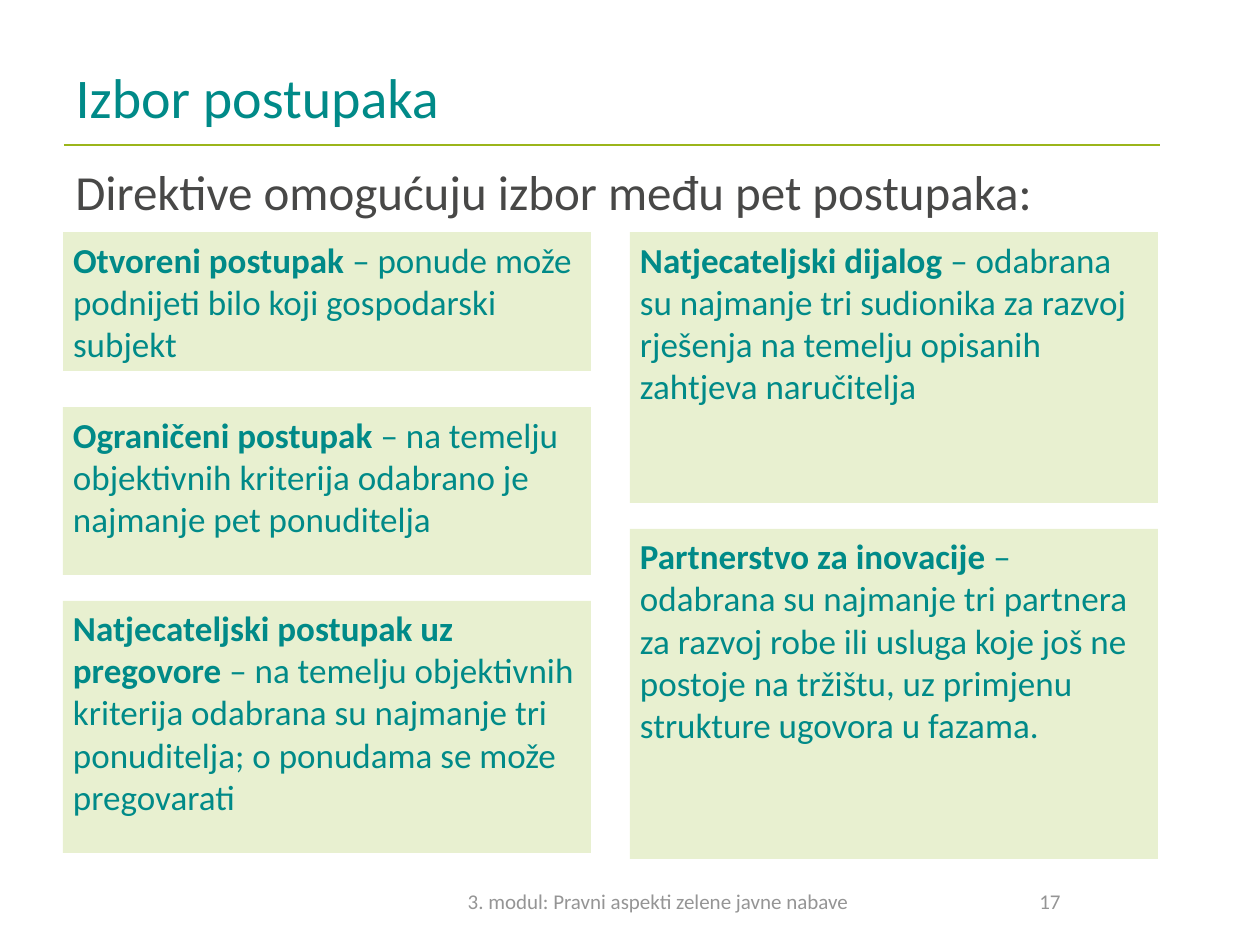
from lxml.etree import SubElement
from pptx import Presentation
from pptx.dml.color import RGBColor
from pptx.enum.shapes import MSO_CONNECTOR, MSO_SHAPE
from pptx.enum.text import MSO_ANCHOR as ANCHOR, MSO_AUTO_SIZE, PP_ALIGN as ALIGN
from pptx.oxml.ns import qn
from pptx.util import Emu, Pt

TEAL = RGBColor(0x00, 0x8A, 0x88)
GREEN = RGBColor(0x9B, 0xB5, 0x1B)
PALE_GREEN = RGBColor(0xE8, 0xF0, 0xD0)
DARK_GRAY = RGBColor(0x48, 0x48, 0x47)
GRAY = RGBColor(0x95, 0x95, 0x95)

FONT = "Calibri"
LEFT, RIGHT = 63, 630
TOP = 232
BOX_WIDTH = 528

# left, top, height, procedure, description
PROCEDURES = [
    (LEFT, TOP, 139, "Otvoreni postupak",
     "ponude može podnijeti bilo koji gospodarski subjekt"),
    (LEFT, 407, 168, "Ograničeni postupak",
     "na temelju objektivnih kriterija odabrano je najmanje pet ponuditelja"),
    (LEFT, 601, 252, "Natjecateljski postupak uz pregovore",
     "na temelju objektivnih kriterija odabrana su najmanje tri ponuditelja; "
     "o ponudama se može pregovarati"),
    (RIGHT, TOP, 271, "Natjecateljski dijalog",
     "odabrana su najmanje tri sudionika za razvoj rješenja na temelju "
     "opisanih zahtjeva naručitelja"),
    (RIGHT, 529, 330, "Partnerstvo za inovacije",
     "odabrana su najmanje tri partnera za razvoj robe ili usluga koje još ne "
     "postoje na tržištu, uz primjenu strukture ugovora u fazama."),
]


def px(n):
    return Emu(round(n * 914400 / 126))


def place(sp, x, y, w, h):
    sp.left, sp.top, sp.width, sp.height = px(x), px(y), px(w), px(h)


def write(sp, *texts, size, color, align=ALIGN.LEFT, anchor=ANCHOR.TOP, bold_first=False):
    """Fill a shape with one paragraph, one run for each text."""
    tf = sp.text_frame
    tf.word_wrap = True
    tf.auto_size = MSO_AUTO_SIZE.NONE
    tf.vertical_anchor = anchor
    p = tf.paragraphs[0]
    p.alignment = align
    p.space_before = Pt(0)
    for i, text in enumerate(texts):
        r = p.add_run()
        r.text = text
        r.font.name, r.font.size = FONT, Pt(size)
        r.font.color.rgb = color
        r.font.bold = bold_first and i == 0


def remove_bullet(p):
    pPr = p._p.get_or_add_pPr()
    pPr.set("marL", "0")
    pPr.set("indent", "0")
    SubElement(pPr, qn("a:buNone"))


def add_rule(s, x1, x2, y):
    line = s.shapes.add_connector(MSO_CONNECTOR.STRAIGHT, px(x1), px(y), px(x2), px(y))
    line.line.color.rgb = GREEN
    line.line.width = Pt(0.75)
    SubElement(line._element.spPr, qn("a:effectLst"))


def add_label(s, text, x, y, w, h, **fmt):
    write(s.shapes.add_textbox(px(x), px(y), px(w), px(h)), text, **fmt)


def fill_procedure(sp, name, description):
    sp.fill.solid()
    sp.fill.fore_color.rgb = PALE_GREEN
    sp.line.fill.background()
    tf = sp.text_frame
    tf.margin_left = tf.margin_right = px(10)
    tf.margin_top = tf.margin_bottom = px(6)
    write(sp, f"{name} ", f"– {description}", size=20, color=TEAL, bold_first=True)


def add_procedures(s, body):
    """Use the body placeholder for the first procedure and rectangles for the rest."""
    for i, (x, y, h, name, description) in enumerate(PROCEDURES):
        if i == 0:
            sp = body
            place(sp, x, y, BOX_WIDTH, h)
            remove_bullet(sp.text_frame.paragraphs[0])
        else:
            sp = s.shapes.add_shape(MSO_SHAPE.RECTANGLE, px(x), px(y), px(BOX_WIDTH), px(h))
            sp.shadow.inherit = False
        fill_procedure(sp, name, description)


def main():
    prs = Presentation()
    prs.slide_width, prs.slide_height = px(1260), px(945)
    s = prs.slides.add_slide(prs.slide_layouts[1])

    add_rule(s, 64, 1160, 145)
    title = s.shapes.title
    place(title, LEFT, 38, 1082, 117)
    write(title, "Izbor postupaka", size=32, color=TEAL, anchor=ANCHOR.MIDDLE)
    add_procedures(s, s.placeholders[1])
    add_label(s, "Direktive omogućuju izbor među pet postupaka:", LEFT, 155, 1082, 72,
              size=28, color=DARK_GRAY)

    footer = dict(size=12, color=GRAY, align=ALIGN.CENTER, anchor=ANCHOR.MIDDLE)
    add_label(s, "3. modul: Pravni aspekti zelene javne nabave", 359, 876, 598, 50, **footer)
    add_label(s, "17", 903, 876, 294, 50, **footer)

    prs.save("out.pptx")


if __name__ == "__main__":
    main()
